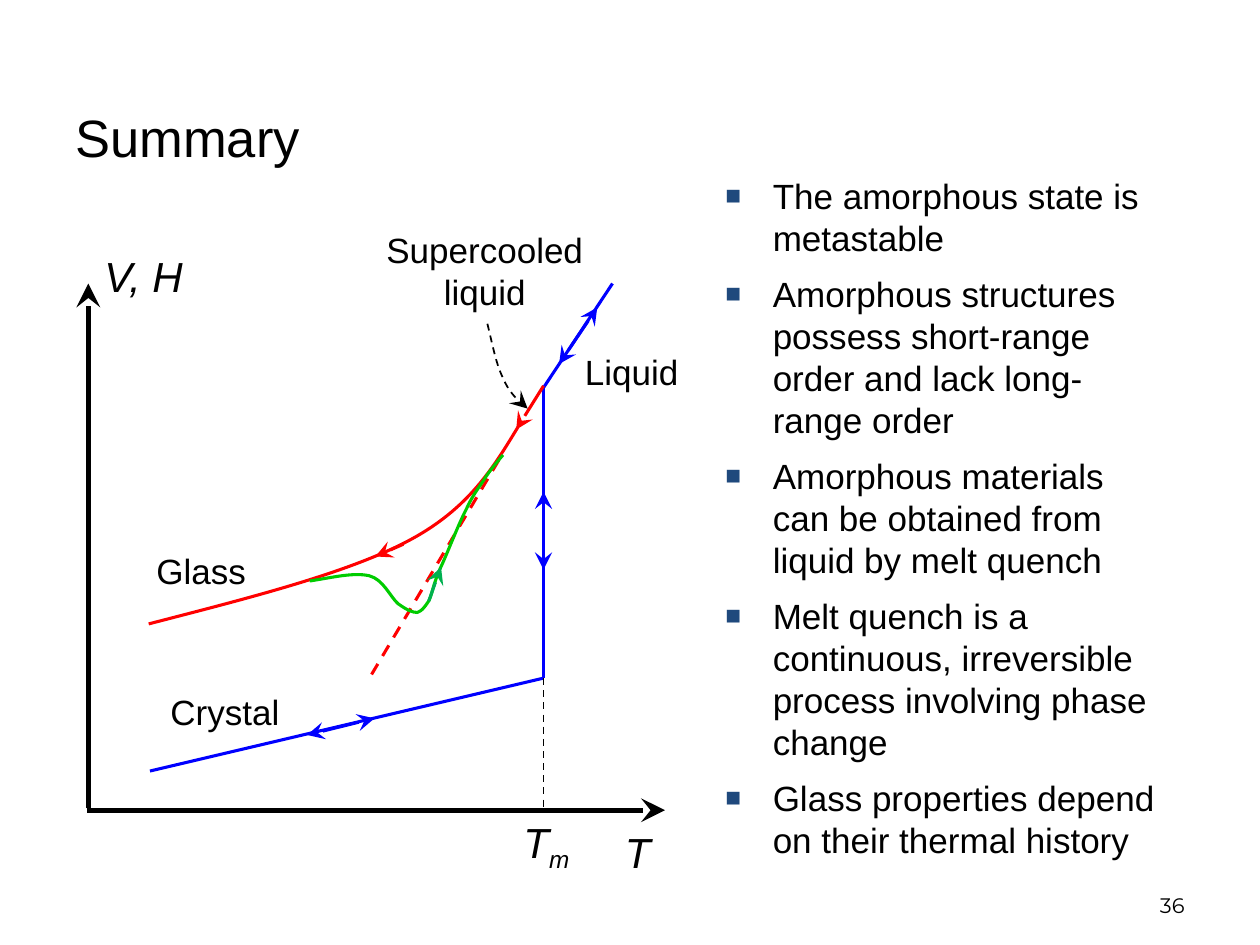
from lxml import etree
from pptx import Presentation
from pptx.dml.color import RGBColor
from pptx.enum import dml, shapes, text
from pptx.oxml import ns
from pptx.util import Pt

BLACK = RGBColor(0, 0, 0)
BLUE = RGBColor(0, 0, 255)
RED = RGBColor(255, 0, 0)
LIME = RGBColor(0, 204, 0)
GREEN = RGBColor(0, 176, 80)
NAVY = "1F497D"

LEFT, CENTER, RIGHT = text.PP_ALIGN.LEFT, text.PP_ALIGN.CENTER, text.PP_ALIGN.RIGHT
TOP, MID, LOW = text.MSO_ANCHOR.TOP, text.MSO_ANCHOR.MIDDLE, text.MSO_ANCHOR.BOTTOM

POINTS = [
    "The amorphous state is metastable",
    "Amorphous structures possess short-range order and lack long-range order",
    "Amorphous materials can be obtained from liquid by melt quench",
    "Melt quench is a continuous, irreversible process involving phase change",
    "Glass properties depend on their thermal history",
]

# Melting point, where the liquid and crystal lines break
MELT, HIGH, FOOT = 310.6, 220.5, 387.5

# Start point, then two handles and an end point for each cubic piece
COOL = [(296, 244), (282, 267), (268, 291), (232.5, 309.5),
        (197, 328), (141, 342), (85, 356.5)]
HEAT = [(177, 332), (190, 330), (202, 327), (211, 329),
        (219, 331), (223, 341), (227.5, 345),
        (232.5, 348.5), (235.5, 350), (238.5, 350),
        (241, 349), (242, 348), (245, 343.5),
        (247, 340), (247.5, 333.5), (252, 324),
        (256, 315.5), (262, 299.5), (266.5, 291),
        (270.5, 282), (275, 277), (278, 272),
        (281.5, 267), (284.5, 263.5), (287.5, 260)]
HINT = [(278.5, 185), (281, 195), (283, 206), (286.5, 214),
        (290, 222), (295, 229), (301.5, 233.5)]


def add(node, tag, **attrs):
    return etree.SubElement(node, ns.qn(tag), attrs)


def bend(shape):
    """Turn each three straight segments of a freeform into one cubic piece."""
    for track in list(shape._element.iter(ns.qn("a:path"))):
        legs = track.findall(ns.qn("a:lnTo"))
        for i in range(0, len(legs), 3):
            cubic = add(track, "a:cubicBezTo")
            for leg in legs[i:i + 3]:
                cubic.append(leg[0])
                track.remove(leg)


class Board:
    font = "Arial"

    def __init__(self, slide):
        self.slide = slide

    def ink(self, line, color, width, dash, ends):
        """Style a line; ends holds the XML names of the ends with arrowheads."""
        line.color.rgb = color
        line.width = Pt(width)
        if dash:
            line.dash_style = dml.MSO_LINE.DASH
        for end in ends:
            add(line._get_or_add_ln(), "a:" + end, type="stealth", w="lg", len="lg")

    def line(self, start, stop, color, width=1.75, dash=False, ends=()):
        link = self.slide.shapes.add_connector(
            shapes.MSO_CONNECTOR.STRAIGHT, *map(Pt, start + stop))
        self.ink(link.line, color, width, dash, ends)
        add(link._element.spPr, "a:effectLst")

    def curve(self, knots, color, width=1.75, dash=False, ends=()):
        dots = [(Pt(x), Pt(y)) for x, y in knots]
        pen = self.slide.shapes.build_freeform(*dots[0])
        pen.add_line_segments(dots[1:], close=False)
        shape = pen.convert_to_shape()
        bend(shape)
        shape.shadow.inherit = False
        shape.fill.background()
        self.ink(shape.line, color, width, dash, ends)

    def text(self, area, words, size=20, align=CENTER, anchor=TOP,
             wrap=True, italic=False, font=None):
        box = self.slide.shapes.add_textbox(*map(Pt, area))
        frame = box.text_frame
        frame.word_wrap = wrap
        frame.vertical_anchor = anchor
        para = frame.paragraphs[0]
        para.text = words
        para.alignment = align
        self.type(para, size, italic, font)
        return frame

    def type(self, para, size, italic=False, font=None):
        para.font.name = font or self.font
        para.font.size = Pt(size)
        para.font.italic = italic
        para.font.color.rgb = BLACK

    def bullets(self, area, items, size=20):
        frame = self.text(area, items[0], size, LEFT)
        frame.margin_right = Pt(10.5)
        for item in items[1:]:
            para = frame.add_paragraph()
            para.text = item
            para.space_before = Pt(8)
        for para in frame.paragraphs:
            props = para._p.get_or_add_pPr()
            props.set("marL", str(Pt(27)))
            props.set("indent", str(Pt(-27)))
            add(add(props, "a:buClr"), "a:srgbClr", val=NAVY)
            add(props, "a:buSzPct", val="75000")
            add(props, "a:buFont", typeface=self.font)
            add(props, "a:buChar", char="■")
            self.type(para, size)


def main():
    deck = Presentation()
    deck.slide_width, deck.slide_height = Pt(720), Pt(540)
    board = Board(deck.slides.add_slide(deck.slide_layouts[6]))
    one, both = ("tailEnd",), ("headEnd", "tailEnd")

    board.text((36, 36, 642, 84), "Summary", 30, LEFT, MID)
    board.bullets((407.5, 96, 271, 408), POINTS)

    # Axes
    board.line((50.5, 462), (50.5, 162), BLACK, 2.75, ends=one)
    board.line((50, 463), (380, 463), BLACK, 2.75, ends=one)
    board.text((52.5, 139.7, 60, 36), "V, H", 24, LEFT, wrap=False, italic=True)
    board.text((350, 468.7, 30, 36), "T", 24, LEFT, wrap=False, italic=True)

    # Liquid, melting step and crystal
    board.line((350, 162), (MELT, HIGH + 1), BLUE)
    board.line((MELT, HIGH), (MELT, FOOT), BLUE)
    board.line((MELT, FOOT), (85.7, 440.6), BLUE)
    board.line((MELT, FOOT), (MELT, 461), BLACK, 1, dash=True)
    mark = board.text((291, 463, 42.5, 36), "T", 24, wrap=False, italic=True)
    sub = mark.paragraphs[0].add_run()
    sub.text = "m"
    sub.font._element.set("baseline", "-25000")
    board.line((341.3, 175.7), (319.5, 208), BLUE, ends=both)
    board.line((MELT, 281), (MELT, 325.5), BLUE, ends=both)
    board.line((214, 410.5), (175.5, 420), BLUE, ends=both)

    # Cooling into glass, then heating
    board.curve(COOL, RED)
    board.line((MELT, HIGH), (295, 245.5), RED, ends=one)
    board.line((230.5, 311), (214.5, 318), RED, ends=one)
    board.curve(HINT, BLACK, 1, dash=True, ends=one)
    board.line((285, 263), (211.7, 386.5), RED, dash=True)
    board.curve(HEAT, LIME)
    board.line((245, 343.5), (252, 324), GREEN, ends=one)

    board.text((208, 127, 138, 55), "Supercooled liquid")
    for left, top, name in [(317.5, 196.5, "Liquid"), (71.5, 310.5, "Glass"),
                            (85, 391, "Crystal")]:
        board.text((left, top, 87, 31.5), name)
    board.text((516, 492, 168, 36), "36", 12, RIGHT, LOW, font="Montserrat")

    deck.save("out.pptx")


if __name__ == "__main__":
    main()
